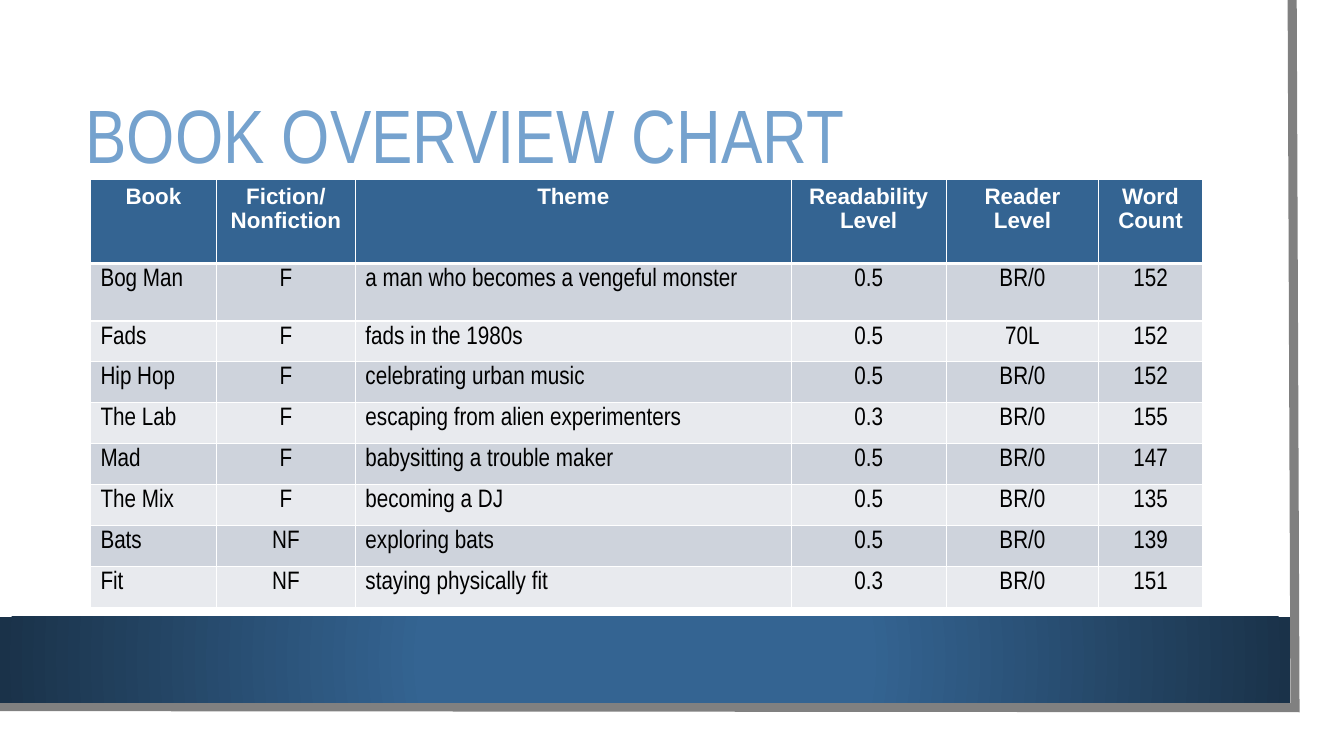
from lxml import etree
from pptx import Presentation
from pptx.dml.color import RGBColor
from pptx.enum.shapes import MSO_SHAPE as SHAPE
from pptx.enum.text import MSO_ANCHOR as ANCHOR, PP_ALIGN as ALIGN
from pptx.oxml import parse_xml
from pptx.oxml.ns import nsdecls, qn
from pptx.util import Pt

WHITE = RGBColor(0xFF, 0xFF, 0xFF)
BLACK = RGBColor(0, 0, 0)
GREY = RGBColor(0x80, 0x80, 0x80)
BLUE = RGBColor(0x34, 0x64, 0x92)
NAVY = RGBColor(0x1A, 0x32, 0x49)
SKY = RGBColor(0x75, 0xA2, 0xCE)
BANDS = (RGBColor(0xCE, 0xD3, 0xDC), RGBColor(0xE8, 0xEA, 0xEE))

HEADER = ("Book", "Fiction/ Nonfiction", "Theme", "Readability Level",
          "Reader Level", "Word Count")
BOOKS = (
    ("Bog Man", "F", "a man who becomes a vengeful monster", "0.5", "BR/0", "152"),
    ("Fads", "F", "fads in the 1980s", "0.5", "70L", "152"),
    ("Hip Hop", "F", "celebrating urban music", "0.5", "BR/0", "152"),
    ("The Lab", "F", "escaping from alien experimenters", "0.3", "BR/0", "155"),
    ("Mad", "F", "babysitting a trouble maker", "0.5", "BR/0", "147"),
    ("The Mix", "F", "becoming a DJ", "0.5", "BR/0", "135"),
    ("Bats", "NF", "exploring bats", "0.5", "BR/0", "139"),
    ("Fit", "NF", "staying physically fit", "0.3", "BR/0", "151"),
)
LEFT_COLUMNS = (0, 2)
COLUMN_WIDTHS = (90, 99.25, 311.25, 110.75, 109, 74)
ROW_HEIGHTS = (60.5, 41) + (29.2,) * 7


def add_run(p, text, font, size, color, bold=False):
    r = p.add_run()
    r.text = text
    r.font.name, r.font.size, r.font.bold = font, Pt(size), bold
    r.font.color.rgb = color


def add_rect(s, left, top, width, height):
    sp = s.shapes.add_shape(SHAPE.RECTANGLE, Pt(left), Pt(top), Pt(width), Pt(height))
    sp.shadow.inherit = False
    sp.line.fill.background()
    return sp


def add_page(s):
    sp = add_rect(s, 0, 0, 943, 523.5)
    sp.fill.solid()
    sp.fill.fore_color.rgb = WHITE


def add_page_edge(s):
    builder = s.shapes.build_freeform(Pt(923), 0)
    builder.add_line_segments([(Pt(925), Pt(505.5)), (Pt(-2), Pt(504.7))], close=False)
    sp = builder.convert_to_shape()
    sp.shadow.inherit = False
    sp.fill.background()
    sp.line.color.rgb, sp.line.width = GREY, Pt(6.5)
    etree.SubElement(sp.line._get_or_add_ln(), qn("a:miter"), lim="800000")


def add_band(s):
    sp = add_rect(s, 0, 440.6, 921.6, 61.4)
    sp.fill.gradient()
    for stop, position, color in zip(sp.fill.gradient_stops, (0.34, 1), (BLUE, NAVY)):
        stop.position, stop.color.rgb = position, color
    # Radial spread from the centre
    lin = sp._element.spPr.find(qn("a:gradFill")).find(qn("a:lin"))
    lin.getparent().replace(lin, parse_xml(
        f'<a:path {nsdecls("a")} path="circle">'
        '<a:fillToRect l="50000" t="50000" r="50000" b="50000"/></a:path>'))


def set_title(s, text):
    sp = s.shapes.title
    s.shapes._spTree.append(sp._element)  # bring in front of the backdrop
    sp.left, sp.top, sp.width, sp.height = Pt(54), Pt(54), Pt(818.6), Pt(90.7)
    tf = sp.text_frame
    tf.word_wrap, tf.vertical_anchor = True, ANCHOR.MIDDLE
    p = tf.paragraphs[0]
    p.alignment, p.line_spacing = ALIGN.LEFT, 0.9
    add_run(p, text, "Arial Narrow", 54, SKY)


def set_borders(cell, bottom, top):
    tc_pr = cell._tc.get_or_add_tcPr()
    for index, (side, width) in enumerate(zip("LRTB", (1, 1, top, bottom))):
        tc_pr.insert(index, parse_xml(
            f'<a:ln{side} {nsdecls("a")} w="{Pt(width)}"><a:solidFill>'
            f'<a:srgbClr val="{WHITE}"/></a:solidFill></a:ln{side}>'))


def fill_cell(cell, text, row, column):
    header = row == 0
    cell.fill.solid()
    cell.fill.fore_color.rgb = BLUE if header else BANDS[(row - 1) % 2]
    set_borders(cell, bottom=3 if header else 1, top=3 if row == 1 else 1)
    cell.margin_top = Pt(5) if header else Pt(4.3)
    p = cell.text_frame.paragraphs[0]
    left = not header and column in LEFT_COLUMNS
    p.alignment = ALIGN.LEFT if left else ALIGN.CENTER
    p.line_spacing = 0.95 if header else 0.9
    if header:
        add_run(p, text, "Arial", 16, WHITE, bold=True)
    else:
        add_run(p, text, "Arial Narrow", 18, BLACK)


def add_book_table(s):
    rows = (HEADER,) + BOOKS
    table = s.shapes.add_table(
        len(rows), len(HEADER), Pt(64.6), Pt(127.8),
        Pt(sum(COLUMN_WIDTHS)), Pt(sum(ROW_HEIGHTS))).table
    for column, width in zip(table.columns, COLUMN_WIDTHS):
        column.width = Pt(width)
    for row, height in zip(table.rows, ROW_HEIGHTS):
        row.height = Pt(height)
    for i, values in enumerate(rows):
        for j, text in enumerate(values):
            fill_cell(table.cell(i, j), text, i, j)


def main():
    prs = Presentation()
    prs.slide_width, prs.slide_height = Pt(960), Pt(540)
    s = prs.slides.add_slide(prs.slide_layouts[5])
    # Backdrop
    add_page(s)
    add_page_edge(s)
    add_band(s)
    # Content
    set_title(s, "BOOK OVERVIEW CHART")
    add_book_table(s)
    prs.save("out.pptx")


if __name__ == "__main__":
    main()
